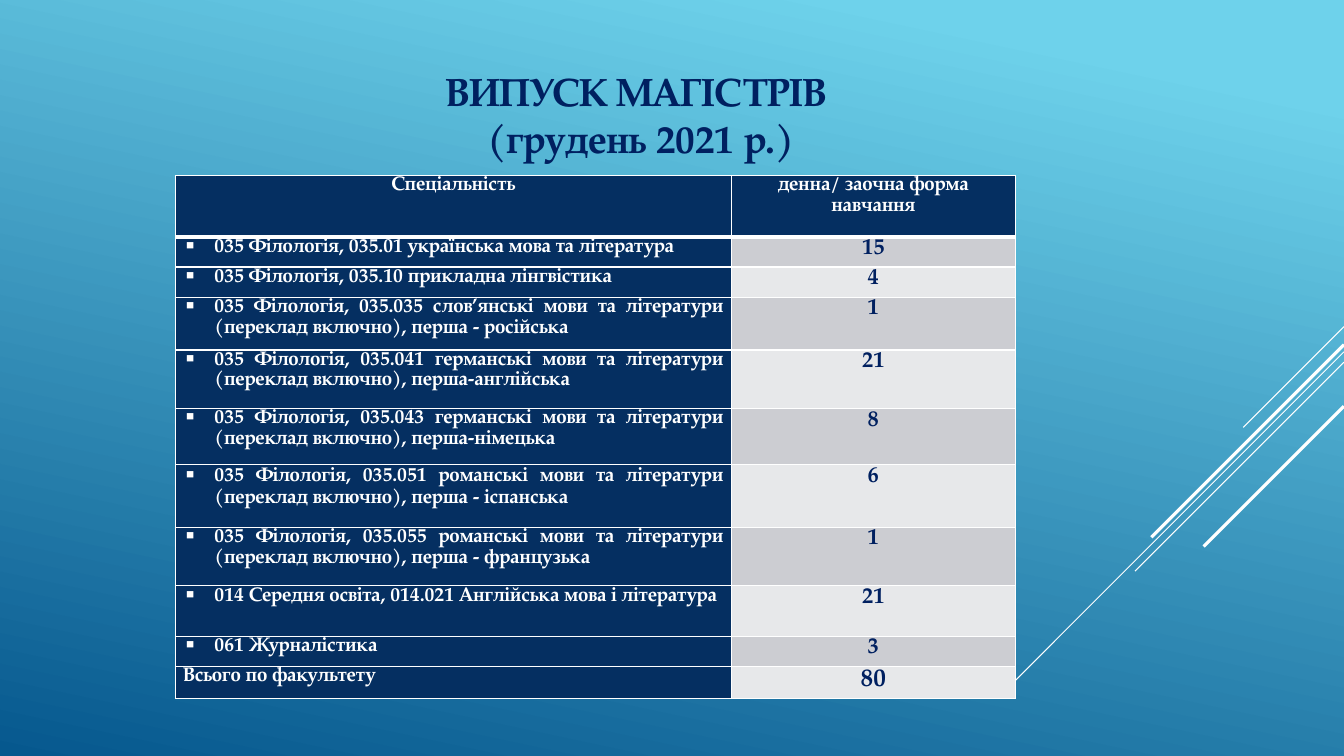
from dataclasses import dataclass

from lxml.etree import SubElement
from pptx import Presentation
from pptx.dml.color import RGBColor
from pptx.enum.shapes import MSO_CONNECTOR
from pptx.enum.text import MSO_ANCHOR, PP_ALIGN
from pptx.oxml import parse_xml
from pptx.oxml.ns import nsdecls, qn
from pptx.util import Pt


@dataclass(frozen=True)
class Theme:
    font: str = "TeX Gyre Pagella"
    sky: str = "6ED2EB"
    sea: str = "06588E"
    navy: str = "052F61"
    ink: str = "002060"
    white: str = "FFFFFF"
    bands: tuple = ("CCCDD2", "E7E8EA")
    title_size: int = 28
    label_size: int = 14
    count_size: int = 16
    total_size: int = 18


THEME = Theme()

TITLE = ("ВИПУСК МАГІСТРІВ ", "(грудень 2021 р.)")
HEADINGS = ("Спеціальність", "денна/ заочна форма навчання")
SPECIALTIES = (
    ("035 Філологія, 035.01 українська мова та література", 15, 21.6),
    ("035 Філологія, 035.10 прикладна лінгвістика", 4, 21.6),
    ("035 Філологія, 035.035 слов’янські мови та літератури (переклад включно), перша - російська", 1, 37.6),
    ("035 Філологія, 035.041 германські мови та літератури (переклад включно), перша-англійська", 21, 41.8),
    ("035 Філологія, 035.043 германські мови та літератури (переклад включно), перша-німецька", 8, 40.3),
    ("035 Філологія, 035.051 романські мови та літератури (переклад включно), перша - іспанська ", 6, 44.6),
    ("035 Філологія, 035.055 романські мови та літератури (переклад включно), перша - французька", 1, 41.8),
    ("014 Середня освіта, 014.021 Англійська мова і література", 21, 36),
    ("061 Журналістика", 3, 21.6),
)
TOTAL_LABEL = "Всього по факультету"
HEADING_HEIGHT, TOTAL_HEIGHT = 43.9, 20.2
RAYS = (
    (960, 233.3, 72, 0.75),
    (960, 251.3, 234.8, 0.75),
    (960, 258.7, 149.3, 0.75),
    (960, 246.2, 137.6, 2.25),
    (960, 290.2, 100.2, 2.25),
)


def style_font(paragraph, size, color):
    for run in paragraph.runs:
        run.font.name = THEME.font
        run.font.size = Pt(size)
        run.font.bold = True
        run.font.color.rgb = RGBColor.from_string(color)


def paint_background(slide):
    fill = slide.background.fill
    fill.gradient()
    fill.gradient_angle = 258
    for stop, color, position in zip(fill.gradient_stops, (THEME.sky, THEME.sea), (0.1, 1)):
        stop.color.rgb = RGBColor.from_string(color)
        stop.position = position


def add_ray(slide, right, top, reach, width):
    ray = slide.shapes.add_connector(
        MSO_CONNECTOR.STRAIGHT, Pt(right), Pt(top), Pt(right - reach), Pt(top + reach))
    ray.line.color.rgb = RGBColor.from_string(THEME.white)
    ray.line.width = Pt(width)
    SubElement(ray._element.spPr, qn("a:effectLst"))


def add_title(slide):
    title = slide.shapes.add_textbox(Pt(84.2), Pt(44.6), Pt(747.4), Pt(108.7))
    frame = title.text_frame
    frame.word_wrap = True
    frame.vertical_anchor = MSO_ANCHOR.TOP
    frame.text = "\n".join(TITLE)
    for paragraph in frame.paragraphs:
        paragraph.alignment = PP_ALIGN.CENTER
        style_font(paragraph, THEME.title_size, THEME.ink)


def add_bullet(paragraph):
    properties = paragraph._p.get_or_add_pPr()
    properties.set("marL", str(Pt(22.5)))
    properties.set("indent", str(-Pt(22.5)))
    SubElement(properties, qn("a:buChar")).set("char", "▪")


def set_borders(cell, top=1, bottom=1):
    properties = cell._tc.get_or_add_tcPr()
    widths = {"lnL": 1, "lnR": 1, "lnT": top, "lnB": bottom}
    for position, (side, width) in enumerate(widths.items()):
        properties.insert(position, parse_xml(
            f'<a:{side} {nsdecls("a")} w="{Pt(width)}"><a:solidFill>'
            f'<a:srgbClr val="{THEME.white}"/></a:solidFill></a:{side}>'))


def fill_cell(cell, text, size, color, background, alignment,
              bulleted=False, spacing=1.07, top=1, bottom=1):
    cell.fill.solid()
    cell.fill.fore_color.rgb = RGBColor.from_string(background)
    set_borders(cell, top, bottom)
    cell.margin_left = cell.margin_right = Pt(5.4)
    cell.margin_top = cell.margin_bottom = Pt(0)
    cell.text_frame.text = text
    paragraph = cell.text_frame.paragraphs[0]
    if bulleted:
        add_bullet(paragraph)
    paragraph.alignment = alignment
    paragraph.line_spacing = spacing
    paragraph.space_after = Pt(8)
    style_font(paragraph, size, color)


def add_graduates_table(slide):
    heights = [HEADING_HEIGHT, *(height for _, _, height in SPECIALTIES), TOTAL_HEIGHT]
    graduates = slide.shapes.add_table(
        len(heights), 2, Pt(125.3), Pt(125.3), Pt(600), Pt(sum(heights))).table
    for column, width in zip(graduates.columns, (397, 203)):
        column.width = Pt(width)
    for row, height in zip(graduates.rows, heights):
        row.height = Pt(height)
    for column, heading in enumerate(HEADINGS):
        fill_cell(graduates.cell(0, column), heading, THEME.label_size, THEME.white,
                  THEME.navy, PP_ALIGN.CENTER, bottom=3)
    for row, (specialty, count, _) in enumerate(SPECIALTIES, 1):
        top = 3 if row == 1 else 1
        spacing = 1.15 if "035.051" in specialty else 1.07
        fill_cell(graduates.cell(row, 0), specialty, THEME.label_size, THEME.white,
                  THEME.navy, PP_ALIGN.JUSTIFY, bulleted=True, spacing=spacing, top=top)
        fill_cell(graduates.cell(row, 1), str(count), THEME.count_size, THEME.ink,
                  THEME.bands[(row - 1) % 2], PP_ALIGN.CENTER, top=top)
    last = len(heights) - 1
    total = sum(count for _, count, _ in SPECIALTIES)
    fill_cell(graduates.cell(last, 0), TOTAL_LABEL, THEME.label_size, THEME.white,
              THEME.navy, PP_ALIGN.LEFT)
    fill_cell(graduates.cell(last, 1), str(total), THEME.total_size, THEME.ink,
              THEME.bands[(last - 1) % 2], PP_ALIGN.CENTER)


def main():
    presentation = Presentation()
    presentation.slide_width = Pt(960)
    presentation.slide_height = Pt(540)
    slide = presentation.slides.add_slide(presentation.slide_layouts[6])
    paint_background(slide)
    for ray in RAYS:
        add_ray(slide, *ray)
    add_title(slide)
    add_graduates_table(slide)
    presentation.save("out.pptx")


if __name__ == "__main__":
    main()
